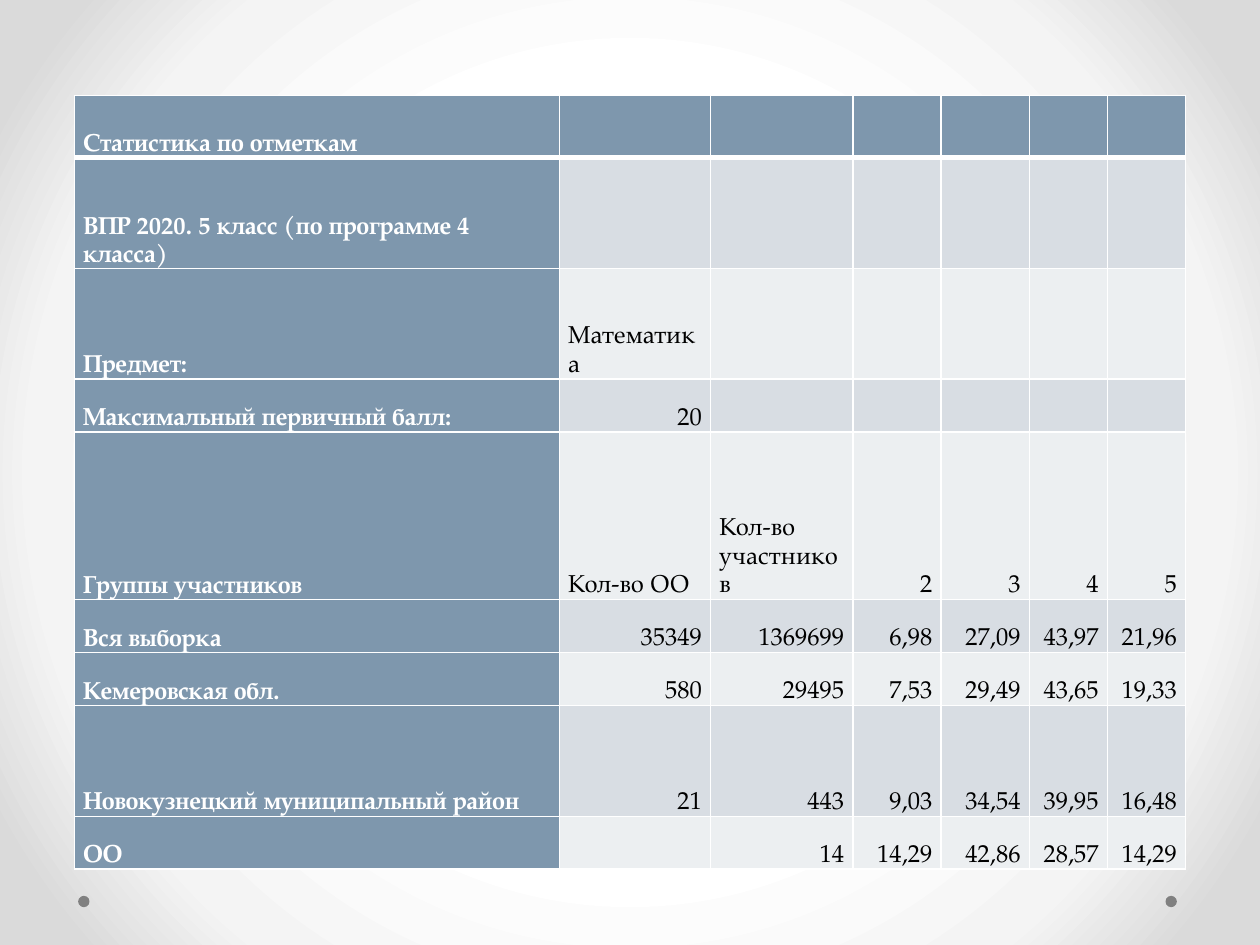
from lxml import etree
from pptx import Presentation
from pptx.dml.color import RGBColor
from pptx.enum.shapes import MSO_SHAPE
from pptx.enum.text import MSO_ANCHOR, PP_ALIGN
from pptx.oxml.ns import qn
from pptx.util import Inches, Pt

BLANK_LAYOUT = 6
OVAL = MSO_SHAPE.OVAL
BOTTOM = MSO_ANCHOR.BOTTOM
LEFT = PP_ALIGN.LEFT
RIGHT = PP_ALIGN.RIGHT

FONT = "TeX Gyre Pagella"
WHITE = "FFFFFF"
BLACK = "000000"
HEADER = "7E97AD"
BANDS = ("ECEFF1", "D8DDE3")
DOT = "808080"
BACKGROUND_STOPS = ((50, WHITE), (76, "F4F4F4"), (92, "DADADA"))

COLUMN_WIDTHS = (3.85, 1.2, 1.13, 0.7, 0.7, 0.62, 0.62)
ROWS = (
    (0.49, ("Статистика по отметкам",)),
    (0.88, ("ВПР 2020. 5 класс (по программе 4 класса)",)),
    (0.88, ("Предмет:", "Математика")),
    (0.42, ("Максимальный первичный балл:", "20")),
    (1.33, ("Группы участников", "Кол-во ОО", "Кол-во участников", "2", "3", "4", "5")),
    (0.42, ("Вся выборка", "35349", "1369699", "6,98", "27,09", "43,97", "21,96")),
    (0.42, ("Кемеровская обл.", "580", "29495", "7,53", "29,49", "43,65", "19,33")),
    (0.88, ("Новокузнецкий муниципальный район", "21", "443", "9,03", "34,54", "39,95", "16,48")),
    (0.42, ("ОО", "", "14", "14,29", "42,86", "28,57", "14,29")),
)


def color(value):
    return RGBColor.from_string(value)


def add_color(parent, value):
    etree.SubElement(parent, qn("a:srgbClr"), val=value)


def paint_background(page):
    page.background.fill.gradient()
    gradient = next(page.element.iter(qn("a:gradFill")))
    for child in list(gradient):
        gradient.remove(child)
    stops = etree.SubElement(gradient, qn("a:gsLst"))
    for percent, value in BACKGROUND_STOPS:
        add_color(etree.SubElement(stops, qn("a:gs"), pos=str(percent * 1000)), value)
    circle = etree.SubElement(gradient, qn("a:path"))
    circle.set("path", "circle")
    center = etree.SubElement(circle, qn("a:fillToRect"))
    for side in "ltrb":
        center.set(side, "50000")


def add_dots(page, left, top, width, size):
    for x in (left, left + width - size):
        dot = page.shapes.add_shape(OVAL, Inches(x), Inches(top), Inches(size), Inches(size))
        dot.shadow.inherit = False
        dot.fill.solid()
        dot.fill.fore_color.rgb = color(DOT)
        dot.line.fill.background()


def set_borders(cell, row):
    properties = cell._tc.get_or_add_tcPr()
    widths = {"L": 1, "R": 1, "T": 3 if row == 1 else 1, "B": 3 if row == 0 else 1}
    for index, (side, points) in enumerate(widths.items()):
        line = etree.Element(qn("a:ln" + side), w=str(Pt(points)))
        add_color(etree.SubElement(line, qn("a:solidFill")), WHITE)
        properties.insert(index, line)


def write_cell(cell, text, is_header):
    cell.vertical_anchor = BOTTOM
    cell.margin_left = cell.margin_right = Inches(0.07)
    cell.margin_top = cell.margin_bottom = 0
    para = cell.text_frame.paragraphs[0]
    para.line_spacing = 1.15
    para.alignment = RIGHT if text[0].isdigit() else LEFT
    span = para.add_run()
    span.text = text
    span.font.name = FONT
    span.font.size = Pt(14)
    span.font.bold = is_header
    span.font.color.rgb = color(WHITE if is_header else BLACK)


def add_marks_table(page, left, top):
    heights = [height for height, _ in ROWS]
    frame = page.shapes.add_table(
        len(ROWS), len(COLUMN_WIDTHS), Inches(left), Inches(top),
        Inches(sum(COLUMN_WIDTHS)), Inches(sum(heights)))
    table = frame.table
    table.horz_banding = False
    for column, width in zip(table.columns, COLUMN_WIDTHS):
        column.width = Inches(width)
    for row, (height, texts) in enumerate(ROWS):
        table.rows[row].height = Inches(height)
        for column in range(len(COLUMN_WIDTHS)):
            cell = table.cell(row, column)
            is_header = row == 0 or column == 0
            cell.fill.solid()
            cell.fill.fore_color.rgb = color(HEADER if is_header else BANDS[row % 2])
            set_borders(cell, row)
            if column < len(texts) and texts[column]:
                write_cell(cell, texts[column], is_header)


def main():
    deck = Presentation()
    deck.slide_width = Inches(10)
    deck.slide_height = Inches(7.5)
    page = deck.slides.add_slide(deck.slide_layouts[BLANK_LAYOUT])
    paint_background(page)
    add_dots(page, 0.62, 7.11, 8.72, 0.09)
    add_marks_table(page, 0.59, 0.76)
    deck.save("out.pptx")


if __name__ == "__main__":
    main()
